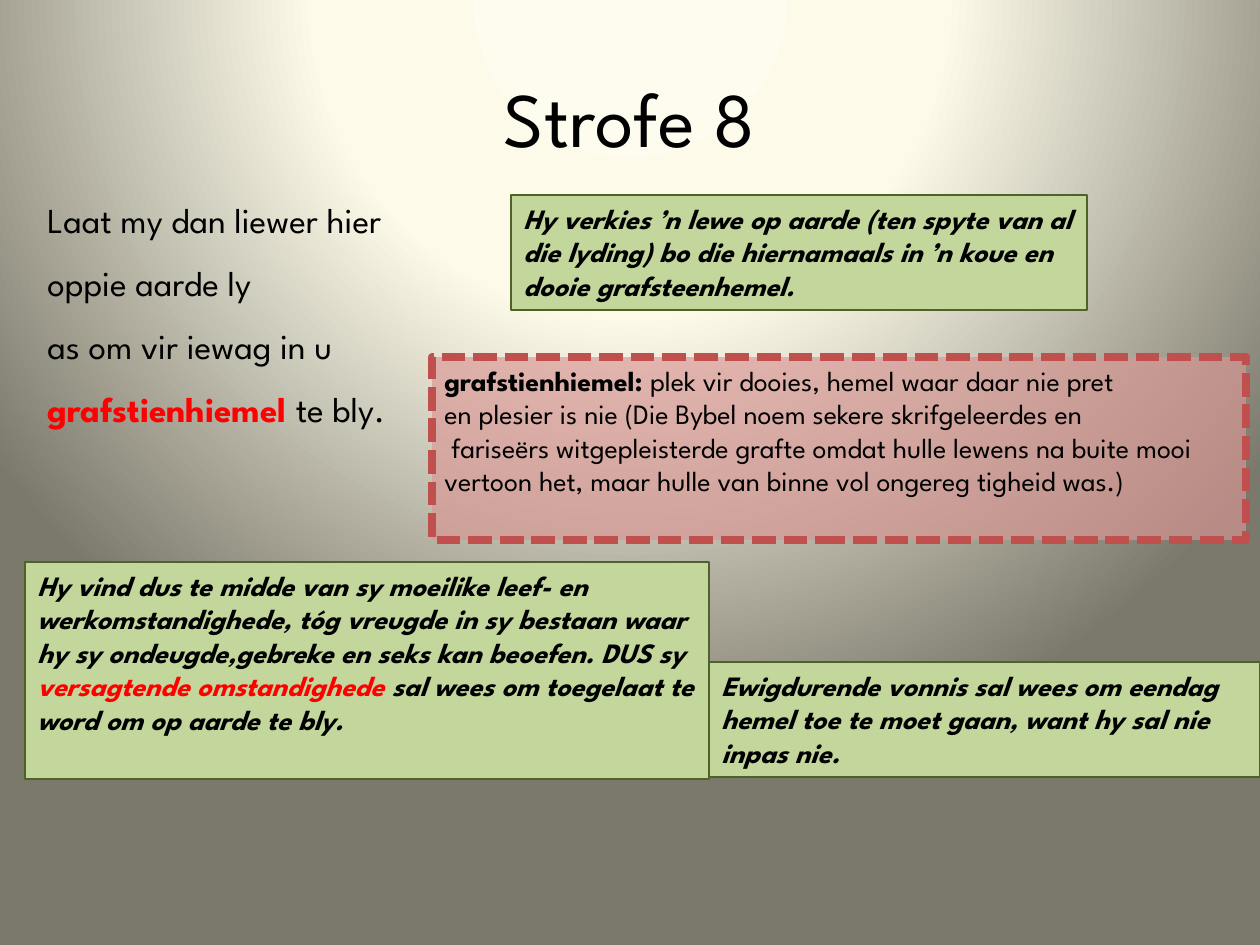
from lxml.etree import SubElement
from pptx import Presentation
from pptx.dml.color import RGBColor
from pptx.enum.dml import MSO_LINE
from pptx.enum.shapes import MSO_SHAPE
from pptx.enum.text import MSO_ANCHOR, PP_ALIGN
from pptx.oxml import parse_xml
from pptx.oxml.ns import nsdecls, qn
from pptx.util import Pt

EMU_PER_PX = 914400 / 126
FONT = "League Spartan"
BLACK, RED = "000000", "FF0000"
GREEN, DARK_GREEN = "C3D69B", "4F6228"
PINK, DARK_RED = "D99694", "C0504D"
BOLD = {"bold": True}
RED_TEXT = {"color": RED}


def px(length):
    return round(length * EMU_PER_PX)


def rgb(value):
    return RGBColor.from_string(value)


class SlideBuilder:
    def __init__(self, slide):
        self.slide = slide

    def background(self, stops, focus):
        """Radial gradient; stops are (percent, colour), focus is l, t, r, b in percent."""
        stop_xml = "".join(
            f'<a:gs pos="{pos * 1000}"><a:srgbClr val="{color}"/></a:gs>'
            for pos, color in stops)
        focus_xml = " ".join(
            f'{side}="{value * 1000}"' for side, value in zip("ltrb", focus))
        bg = parse_xml(
            f'<p:bg {nsdecls("p", "a")}><p:bgPr><a:gradFill rotWithShape="1">'
            f'<a:gsLst>{stop_xml}</a:gsLst>'
            f'<a:path path="circle"><a:fillToRect {focus_xml}/></a:path>'
            f'</a:gradFill><a:effectLst/></p:bgPr></p:bg>')
        self.slide.element.cSld.insert(0, bg)

    def add_paragraphs(self, shape, paragraphs, size, anchor=MSO_ANCHOR.TOP,
                       base=None, **paragraph_format):
        """Fill a shape with paragraphs, each a list of (text, format) runs."""
        frame = shape.text_frame
        frame.word_wrap = True
        frame.vertical_anchor = anchor
        for index, runs in enumerate(paragraphs):
            paragraph = frame.paragraphs[0] if index == 0 else frame.add_paragraph()
            for name, value in ({"alignment": PP_ALIGN.LEFT} | paragraph_format).items():
                setattr(paragraph, name, value)
            for text, extra in runs:
                run = paragraph.add_run()
                run.text = text
                style = {"name": FONT, "size": Pt(size), "color": BLACK}
                style |= (base or {}) | extra
                run.font.color.rgb = rgb(style.pop("color"))
                for name, value in style.items():
                    setattr(run.font, name, value)

    def text(self, box, paragraphs, size, **options):
        shape = self.slide.shapes.add_textbox(*map(px, box))
        self.add_paragraphs(shape, paragraphs, size, **options)

    def panel(self, box, paragraphs, fill, line, width, dash=None, alpha=None, **options):
        shape = self.slide.shapes.add_shape(MSO_SHAPE.RECTANGLE, *map(px, box))
        shape.shadow.inherit = False
        shape.fill.solid()
        shape.fill.fore_color.rgb = rgb(fill)
        if alpha is not None:
            color = shape.element.spPr.find(qn("a:solidFill"))[0]
            SubElement(color, qn("a:alpha"), val=str(alpha * 1000))
        shape.line.color.rgb = rgb(line)
        shape.line.width = Pt(width)
        if dash:
            shape.line.dash_style = dash
        self.add_paragraphs(shape, paragraphs, 16, **options)

    def comment(self, box, runs):
        self.panel(box, [runs], GREEN, DARK_GREEN, 0.75,
                   base={"bold": True, "italic": True})


def main():
    deck = Presentation()
    deck.slide_width, deck.slide_height = px(1260), px(945)
    builder = SlideBuilder(deck.slides.add_slide(deck.slide_layouts[6]))
    builder.background([(0, "FEFCEE"), (40, "FDFAEA"), (100, "7B796B")],
                       (50, -80, 50, 180))

    # Title
    builder.text((63, 38, 1134, 158), [[("Strofe 8", {})]], 44,
                 anchor=MSO_ANCHOR.MIDDLE, alignment=PP_ALIGN.CENTER)

    # Stanza
    builder.text((35, 171, 1181, 267), [
        [("Laat my dan liewer hier", {})],
        [("oppie aarde ly", {})],
        [("as om vir iewag in u", {})],
        [("grafstienhiemel ", BOLD | RED_TEXT), ("te bly.", {})],
    ], 20, line_spacing=1.5)

    # Word explanation
    builder.panel((432, 357, 814, 183), [
        [("grafstienhiemel: ", BOLD),
         ("plek vir dooies, hemel waar daar nie pret", {})],
        [("en plesier is nie (Die Bybel noem sekere skrifgeleerdes en", {})],
        [(" fariseërs witgepleisterde grafte omdat hulle lewens na buite mooi "
          "vertoon het, maar hulle van binne vol ongereg tigheid was.)", {})],
    ], PINK, DARK_RED, 4.5, dash=MSO_LINE.SQUARE_DOT, alpha=66)

    # Comments on the stanza
    builder.comment((511, 195, 576, 115), [
        ("Hy verkies ’n lewe op aarde (ten spyte van al die lyding) bo die "
         "hiernamaals in ’n koue en dooie grafsteenhemel.", {})])
    builder.comment((25, 562, 684, 217), [
        ("Hy vind dus te midde van sy moeilike leef- en werkomstandighede, tóg "
         "vreugde in sy bestaan waar hy sy ondeugde,gebreke en seks kan beoefen. "
         "DUS sy ", {}),
        ("versagtende omstandighede ", RED_TEXT),
        ("sal wees om toegelaat te word om op aarde te bly.", {})])
    builder.comment((709, 662, 551, 115), [
        ("Ewigdurende vonnis sal wees om eendag hemel toe te moet gaan, want hy "
         "sal nie inpas nie.", {})])

    deck.save("out.pptx")


if __name__ == "__main__":
    main()
